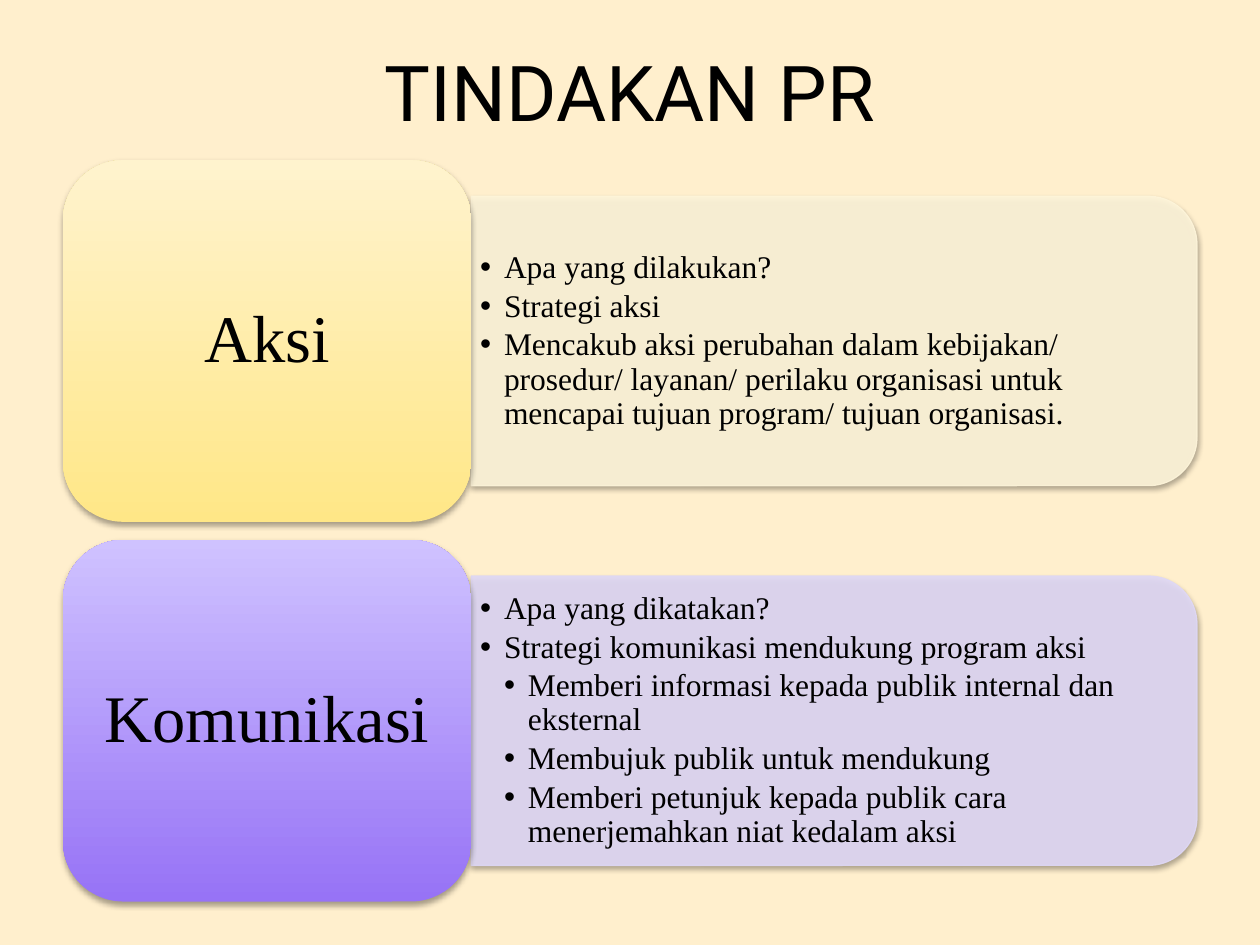
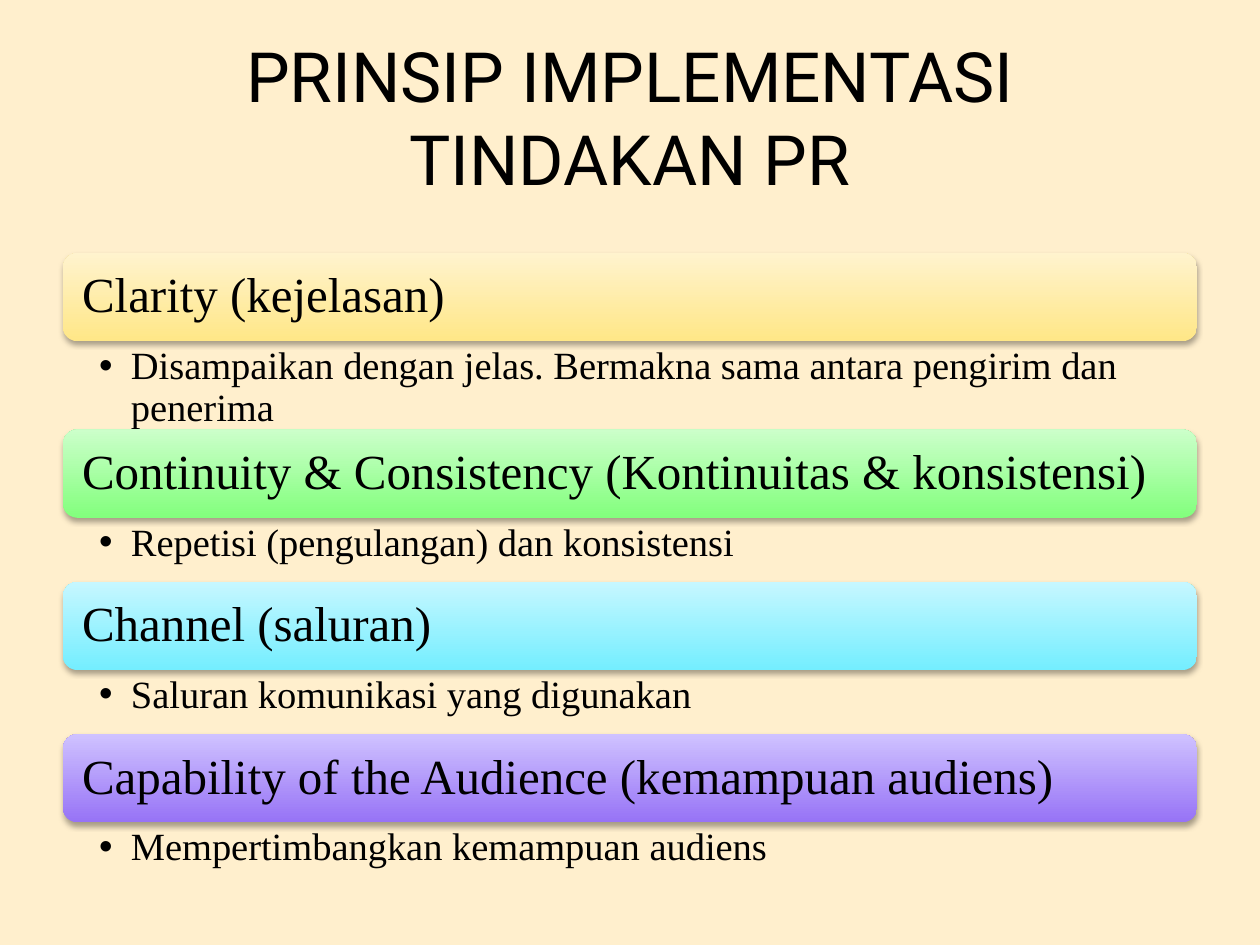
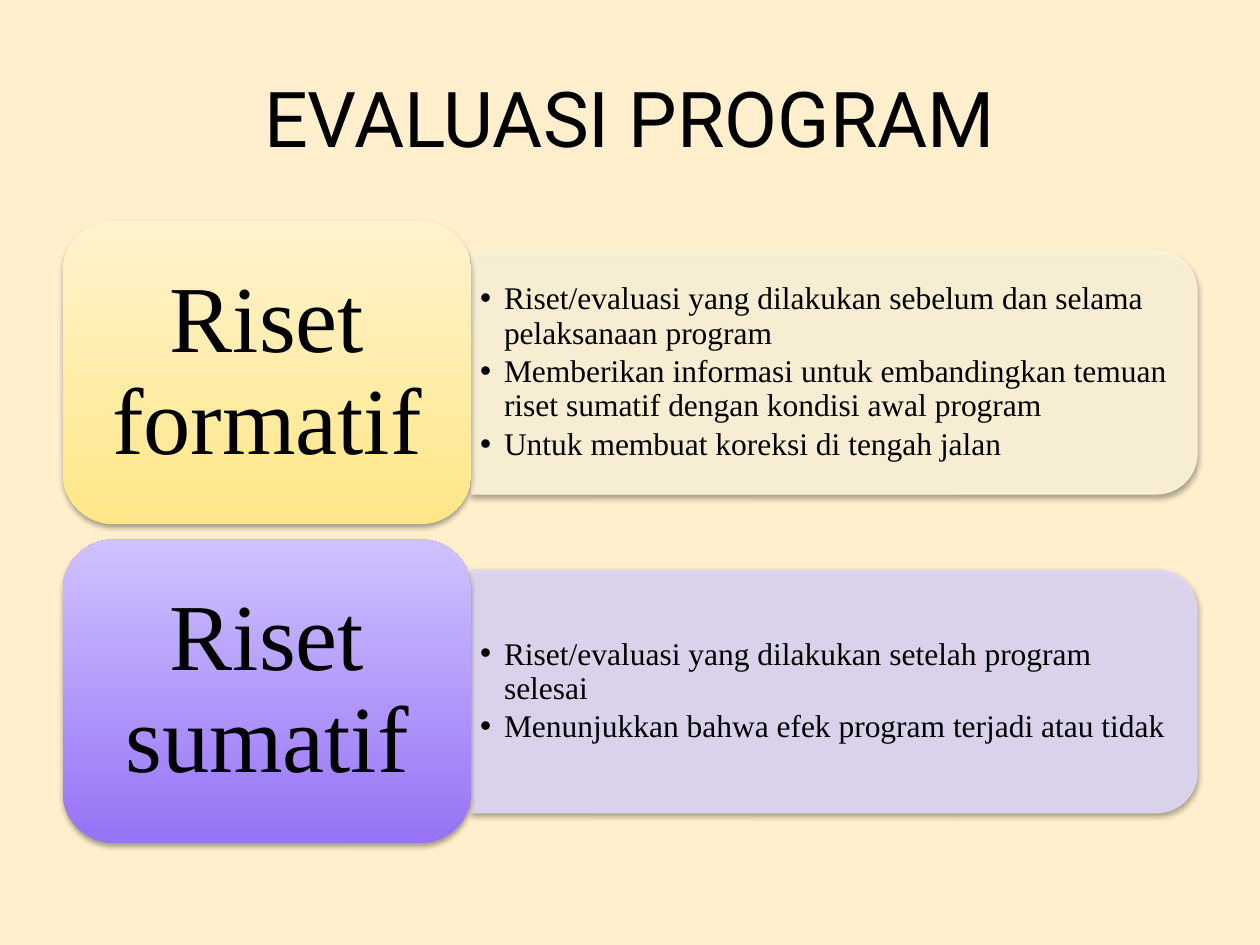
from lxml import etree
from pptx import Presentation
from pptx.dml.color import RGBColor
from pptx.enum.shapes import MSO_SHAPE
from pptx.enum.text import MSO_ANCHOR, MSO_AUTO_SIZE, PP_ALIGN
from pptx.oxml import parse_xml
from pptx.oxml.ns import qn
from pptx.util import Cm, Pt

ROUND = MSO_SHAPE.ROUNDED_RECTANGLE
TAB = MSO_SHAPE.ROUND_2_SAME_RECTANGLE
TOP, MIDDLE = MSO_ANCHOR.TOP, MSO_ANCHOR.MIDDLE
FIXED = MSO_AUTO_SIZE.NONE
LEFT, CENTER = PP_ALIGN.LEFT, PP_ALIGN.CENTER

CREAM = RGBColor(0xFF, 0xEF, 0xCD)
BLACK = RGBColor(0x00, 0x00, 0x00)
GOLD = RGBColor(0xFF, 0xE7, 0x87), RGBColor(0xFF, 0xF3, 0xCE)
GREEN = RGBColor(0x82, 0xFF, 0x7D), RGBColor(0xCC, 0xFF, 0xCA)
CYAN = RGBColor(0x74, 0xEE, 0xFF), RGBColor(0xC6, 0xF7, 0xFF)
VIOLET = RGBColor(0x97, 0x73, 0xF6), RGBColor(0xCF, 0xC2, 0xFF)
SAND = RGBColor(0xFE, 0xF5, 0xDA)
LILAC = RGBColor(0xDF, 0xD8, 0xF6)

HEAD, BODY = "Roboto", "Times New Roman"
EDGE, FULL = 1.27, 22.86
CARD_W, BAND_W, LIST_W = 8.23, 14.63, 14.38
BAR_H = 1.78
PAIR, QUAD = 3, 4

SHADOW = (
    '<a:effectLst xmlns:a="http://schemas.openxmlformats.org/drawingml/2006/main">'
    '<a:outerShdw blurRad="40000" dist="23000" dir="5400000" rotWithShape="0">'
    '<a:srgbClr val="000000"><a:alpha val="35000"/></a:srgbClr>'
    '</a:outerShdw></a:effectLst>'
)

ACTION = [
    ("Aksi", GOLD, SAND, [
        (0, "Apa yang dilakukan?"),
        (0, "Strategi aksi"),
        (0, "Mencakub aksi perubahan dalam kebijakan/ prosedur/ layanan/ "
            "perilaku organisasi untuk mencapai tujuan program/ tujuan organisasi."),
    ]),
    ("Komunikasi", VIOLET, LILAC, [
        (0, "Apa yang dikatakan?"),
        (0, "Strategi komunikasi mendukung program aksi"),
        (1, "Memberi informasi kepada publik internal dan eksternal"),
        (1, "Membujuk publik untuk mendukung"),
        (1, "Memberi petunjuk kepada publik cara menerjemahkan niat kedalam aksi"),
    ]),
]
RULES = [
    ("Clarity (kejelasan)", GOLD, 1.78,
     "Disampaikan dengan jelas. Bermakna sama antara pengirim dan penerima"),
    ("Continuity & Consistency (Kontinuitas & konsistensi)", GREEN, 1.29,
     "Repetisi (pengulangan) dan konsistensi"),
    ("Channel (saluran)", CYAN, 1.29, "Saluran komunikasi yang digunakan"),
    ("Capability of the Audience (kemampuan audiens)", VIOLET, 1.29,
     "Mempertimbangkan kemampuan audiens"),
]
REVIEW = [
    ("Riset formatif", GOLD, SAND, [
        (0, "Riset/evaluasi yang dilakukan sebelum dan selama pelaksanaan program"),
        (0, "Memberikan informasi untuk embandingkan temuan riset sumatif "
            "dengan kondisi awal program"),
        (0, "Untuk membuat koreksi di tengah jalan"),
    ]),
    ("Riset sumatif", VIOLET, LILAC, [
        (0, "Riset/evaluasi yang dilakukan setelah program selesai"),
        (0, "Menunjukkan bahwa efek program terjadi atau tidak"),
    ]),
]


def apply(item, **vals):
    """Set each named attribute on an object."""
    for name, val in vals.items():
        setattr(item, name, val)


def place(shape, x, y, w, h):
    """Move and size a shape, in centimetres."""
    apply(shape, left=Cm(x), top=Cm(y), width=Cm(w), height=Cm(h))


def frame(shape, anchor, left, top, right):
    """Set the anchor and insets of a text frame and return it."""
    text = shape.text_frame
    apply(text, word_wrap=True, auto_size=FIXED, vertical_anchor=anchor,
          margin_left=Cm(left), margin_right=Cm(right),
          margin_top=Cm(top), margin_bottom=Cm(top))
    return text


def write(para, words, size, font, align, **vals):
    """Fill a paragraph with one run in the given style."""
    apply(para, alignment=align, **vals)
    run = para.add_run()
    run.text = words
    apply(run.font, size=Pt(size), name=font, bold=False)
    run.font.color.rgb = BLACK


def title(slide, words, y, size=44):
    """Fill the title placeholder."""
    shape = slide.shapes.title
    place(shape, EDGE, y, FULL, 3.18)
    text = frame(shape, MIDDLE, 0.25, 0.13, 0.25)
    write(text.paragraphs[0], words, size, HEAD, CENTER)


def bullet(para, left, hang):
    """Give a paragraph a round bullet and a hanging indent."""
    props = para._p.get_or_add_pPr()
    props.set("marL", str(Cm(left)))
    props.set("indent", str(-Cm(hang)))
    etree.SubElement(props, qn("a:buChar")).set("char", "•")


def fill_list(shape, rows, size, gap, hang):
    """Write bulleted rows of (level, words) in a body placeholder."""
    text = shape.text_frame
    for num, (level, words) in enumerate(rows):
        para = text.add_paragraph() if num else text.paragraphs[0]
        write(para, words, size, BODY, LEFT, level=level, line_spacing=0.9,
              space_before=Pt(0), space_after=Pt(size * gap))
        bullet(para, hang * (level + 1), hang)
    shape.element.getparent().append(shape.element)


def block(slide, kind, x, y, w, h):
    """Add a preset shape with the soft shadow."""
    shape = slide.shapes.add_shape(kind, Cm(x), Cm(y), Cm(w), Cm(h))
    shape.line.fill.background()
    shape.element.spPr.append(parse_xml(SHADOW))
    return shape


def label(slide, words, tones, box, size, align, side, top):
    """Add a rounded box with a vertical gradient and a caption."""
    shape = block(slide, ROUND, *box)
    shape.fill.gradient()
    shape.fill.gradient_angle = 90
    for stop, tone in zip(shape.fill.gradient_stops, tones):
        stop.color.rgb = tone
    text = frame(shape, MIDDLE, side, top, side)
    write(text.paragraphs[0], words, size, BODY, align, line_spacing=0.9)


def band(slide, tone, x, mid, w, h):
    """Add a see-through band, rounded at its right end."""
    shape = block(slide, TAB, x + (w - h) / 2, mid - w / 2, h, w)
    shape.rotation = 90
    shape.line.width = Pt(0.75)
    for fill in (shape.fill, shape.line.fill):
        fill.solid()
        fill.fore_color.rgb = tone
    for color in shape.element.spPr.iter(qn("a:srgbClr")):
        if color.get("val") == str(tone):
            etree.SubElement(color, qn("a:alpha")).set("val", "90000")


def bodies(slide):
    """Return the body placeholders of a slide."""
    return list(slide.placeholders)[1:]


def cards(slide, rows, y, h, size):
    """Stack cards, each with a band and a list at its right."""
    x = EDGE + CARD_W
    tall = 0.8 * h
    for body, (words, tones, tone, items) in zip(bodies(slide), rows):
        mid = y + h / 2
        band(slide, tone, x, mid, BAND_W, tall)
        label(slide, words, tones, (EDGE, y, CARD_W, h), size, CENTER,
              size * 0.01, size * 0.005)
        place(body, x, mid - tall / 2, LIST_W, tall)
        frame(body, MIDDLE, 0.18, 0.1, 0.18)
        fill_list(body, items, 18, 0.15, 0.48)
        y += 1.05 * h


def bars(slide, rows, y):
    """Stack full-width bars, each with a list below."""
    for body, (words, tones, h, item) in zip(bodies(slide), rows):
        label(slide, words, tones, (EDGE, y, FULL, BAR_H), 28, LEFT, 0.3, 0.3)
        place(body, EDGE, y + BAR_H, FULL, h)
        frame(body, TOP, 0.73, 0.1, 0.56)
        fill_list(body, [(0, item)], 22, 0.2, 0.64)
        y += BAR_H + h


def main():
    """Build the three slides."""
    prs = Presentation()
    apply(prs, slide_width=Cm(25.4), slide_height=Cm(19.05))
    fill = prs.slide_master.background.fill
    fill.solid()
    fill.fore_color.rgb = CREAM
    first, second, third = (
        prs.slides.add_slide(prs.slide_layouts[num]) for num in (PAIR, QUAD, PAIR))
    title(first, "TINDAKAN PR", 0.23)
    cards(first, ACTION, 3.23, 7.29, 38)
    title(second, "PRINSIP IMPLEMENTASI TINDAKAN PR", 0.76, 39.6)
    bars(second, RULES, 5.1)
    title(third, "EVALUASI PROGRAM", 0.76)
    cards(third, REVIEW, 4.45, 6.12, 54)
    prs.save("out.pptx")


if __name__ == "__main__":
    main()
